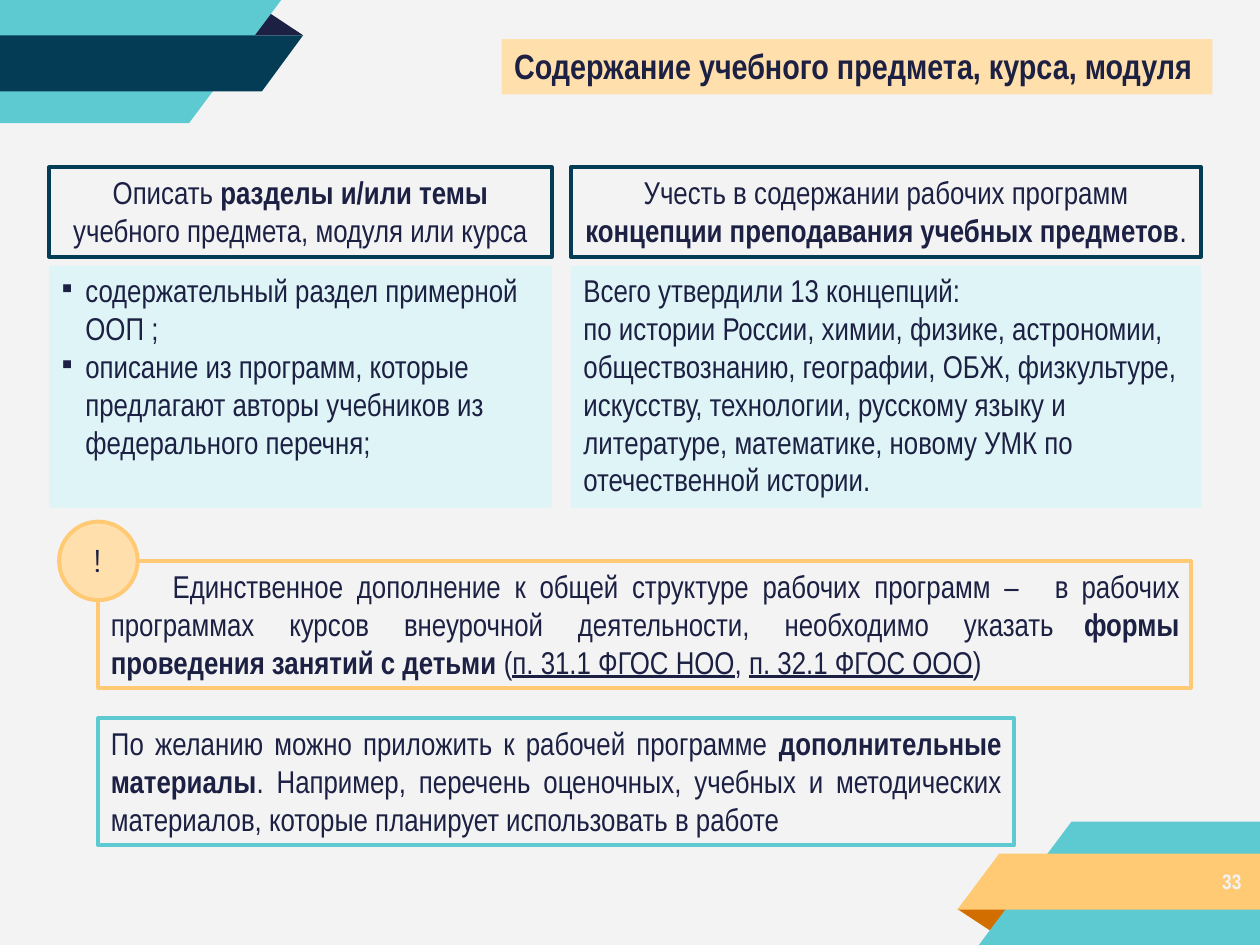
from dataclasses import dataclass, field
from typing import NamedTuple

from lxml import etree
from pptx import Presentation, util as u
from pptx.dml import color
from pptx.enum import shapes, text
from pptx.oxml import ns

Pt = u.Pt
HUES = {
    "page": "F3F3F3", "ink": "1C2043", "teal": "5DC9D1", "navy": "043C56",
    "gold": "FFCA73", "rust": "D26E00", "cream": "FFDFAB", "ice": "DFF4F6",
}
FACE = "Arial Narrow"
MID, RIGHT, FULL = text.PP_ALIGN.CENTER, text.PP_ALIGN.RIGHT, text.PP_ALIGN.JUSTIFY


class Run(NamedTuple):
    words: str
    bold: bool = False
    line: bool = False
    space: float = 0


class Para(NamedTuple):
    runs: list
    align: object = None
    before: float = 0
    left: float = 0
    hang: float = 0
    mark: str = ""


@dataclass
class Box:
    x: float
    y: float
    w: float
    h: float
    paras: list = field(default_factory=list)
    fill: str = ""
    edge: str = ""
    top: float = 0
    right: float = 0
    size: float = 18
    face: str = FACE
    hue: str = "ink"
    bold: bool = False
    kind: object = shapes.MSO_SHAPE.RECTANGLE


class Band(NamedTuple):
    hue: str
    dots: list


def rgb(name: str) -> color.RGBColor:
    return color.RGBColor.from_string(HUES[name])


def paint(shape, fill: str, edge: str) -> None:
    shape.shadow.inherit = False
    if fill:
        shape.fill.solid()
        shape.fill.fore_color.rgb = rgb(fill)
    else:
        shape.fill.background()
    if edge:
        shape.line.color.rgb = rgb(edge)
        shape.line.width = Pt(2.25)
    else:
        shape.line.fill.background()


def spread(words: str, gap: float) -> list:
    """Runs of a line whose spaces are widened by gap points."""
    first, *rest = words.split(" ")
    runs = [Run(first)]
    for word in rest:
        runs += [Run(" ", space=gap), Run(word)]
    return runs


def write(para, item: Para, box: Box) -> None:
    para.alignment = item.align
    para.space_before = Pt(item.before)
    prop = para._p.get_or_add_pPr()
    prop.set("marL", str(Pt(item.left)))
    prop.set("indent", str(Pt(item.hang)))
    if item.mark:
        etree.SubElement(prop, ns.qn("a:buFont")).set("typeface", box.face)
        etree.SubElement(prop, ns.qn("a:buChar")).set("char", item.mark)
    for part in item.runs:
        run = para.add_run()
        run.text = part.words
        look = {"name": box.face, "size": Pt(box.size),
                "bold": part.bold or box.bold, "underline": part.line}
        for key, val in look.items():
            setattr(run.font, key, val)
        run.font.color.rgb = rgb(box.hue)
        if part.space:
            run._r.get_or_add_rPr().set("spc", str(round(part.space * 100)))


def draw(slide, box: Box) -> None:
    area = [Pt(n) for n in (box.x, box.y, box.w, box.h)]
    if box.fill or box.edge:
        shape = slide.shapes.add_shape(box.kind, *area)
        paint(shape, box.fill, box.edge)
    else:
        shape = slide.shapes.add_textbox(*area)
    frame = shape.text_frame
    look = {"word_wrap": True, "vertical_anchor": text.MSO_ANCHOR.TOP,
            "margin_left": 0, "margin_right": Pt(box.right),
            "margin_top": Pt(box.top), "margin_bottom": 0}
    for key, val in look.items():
        setattr(frame, key, val)
    for i, item in enumerate(box.paras):
        write(frame.add_paragraph() if i else frame.paragraphs[0], item, box)


def ribbon(slide, band: Band) -> None:
    first, *rest = [(Pt(x), Pt(y)) for x, y in band.dots]
    pen = slide.shapes.build_freeform(*first, scale=1.0)
    pen.add_line_segments(rest, close=True)
    paint(pen.convert_to_shape(), band.hue, "")


BANDS = [
    # top left corner
    Band("ink", [(152.6, 6.5), (142.6, 20.2), (173.2, 20.2)]),
    Band("teal", [(0, 0), (160.7, 0), (108, 70.4), (0, 70.4)]),
    Band("navy", [(0, 20.2), (173.2, 20.2), (149.7, 52.2), (0, 52.2)]),
    # bottom right corner
    Band("rust", [(578.2, 519.4), (547, 519.4), (568, 533.2)]),
    Band("teal", [(720, 469.6), (612.3, 469.6), (559.4, 540), (720, 540)]),
    Band("gold", [(720, 487.8), (571, 487.8), (547, 519.8), (720, 519.8)]),
]

# Two columns: outlined header above a pale body
COLS = [
    (28.1, 287.2,
     [Para([Run("Описать "), Run("разделы и/или темы", True)], MID, 3.1),
      Para([Run("учебного предмета, модуля или курса")], MID, 0.1)],
     [Para([Run("содержательный раздел примерной ООП ;")], None, 3.2, 20.7, -13.5, "▪"),
      Para([Run("описание из программ, которые предлагают авторы учебников "
                "из федерального перечня;")], None, 0, 20.7, -13.5, "▪")]),
    (326.2, 360.2,
     [Para([Run("Учесть в содержании рабочих программ")], MID, 3.1),
      Para([Run("концепции преподавания учебных предметов", True), Run(".")], MID, 0.1)],
     [Para([Run("Всего утвердили 13 концепций:")], None, 3.2, 7.2),
      Para([Run("по истории России, химии, физике, астрономии, обществознанию, "
                "географии, ОБЖ, физкультуре, искусству, технологии, русскому языку "
                "и литературе, математике, новому УМК по отечественной истории.")],
           None, 0, 7.2)]),
]

BOXES = [Box(286.6, 22.4, 406.2, 31.6, top=2.9, size=20, fill="cream", bold=True, paras=[
    Para([Run("Содержание учебного предмета, курса, модуля")], None, 3.2, 7.2)])]
for x, w, head, body in COLS:
    BOXES += [Box(x, 95.6, w, 51.1, head, "page", "navy", 3.4),
              Box(x, 151.9, w, 138.2, body, "ice", "", 3.2)]
BOXES += [
    # Note on the only addition, with its badge
    Box(56.2, 320.4, 624.2, 72.8, edge="gold"),
    Box(97.9, 323.3, 495, 23.8, top=0.7, paras=[
        Para(spread("Единственное дополнение к общей структуре рабочих программ –", 3.7),
             None, 1, 0.7)]),
    Box(599.8, 323.3, 74.2, 45.4, top=0.7, paras=[
        Para(spread("в рабочих", 3.2), RIGHT, 1), Para([Run("формы", True)], RIGHT)]),
    Box(62.6, 344.9, 555, 45.4, top=0.7, paras=[
        Para(spread("программах курсов внеурочной деятельности, необходимо указать", 15.8),
             None, 1, 0.7),
        Para([Run("проведения занятий с детьми ", True), Run("("),
              Run("п. 31.1 ФГОС НОО", line=True), Run(", "),
              Run("п. 32.1 ФГОС ООО", line=True), Run(")")], None, 0, 0.7)]),
    Box(33.8, 298.1, 44.9, 44.9, fill="cream", edge="gold", kind=shapes.MSO_SHAPE.OVAL),
    Box(52.6, 308.2, 8, 23.8, top=0.7, face="Montserrat",
        paras=[Para([Run("!")], None, 1, 0.7)]),
    # Page number
    Box(695.5, 496.1, 18, 15.8, size=12, hue="page", bold=True,
        paras=[Para([Run("33")], None, 0.2, 2.9)]),
    # Optional materials
    Box(56.2, 410.4, 523.4, 72.7, fill="page", edge="teal", top=3.6, right=7.2, paras=[
        Para([Run("По желанию можно приложить к рабочей программе "),
              Run("дополнительные материалы", True),
              Run(". Например, перечень оценочных, учебных и методических материалов, "
                  "которые планирует использовать в работе")], FULL, 3.2, 7.2)]),
]


def main() -> None:
    deck = Presentation()
    deck.slide_width, deck.slide_height = Pt(720), Pt(540)
    slide = deck.slides.add_slide(deck.slide_layouts[6])
    back = slide.background.fill
    back.solid()
    back.fore_color.rgb = rgb("page")
    for band in BANDS:
        ribbon(slide, band)
    for box in BOXES:
        draw(slide, box)
    deck.save("out.pptx")


if __name__ == "__main__":
    main()
